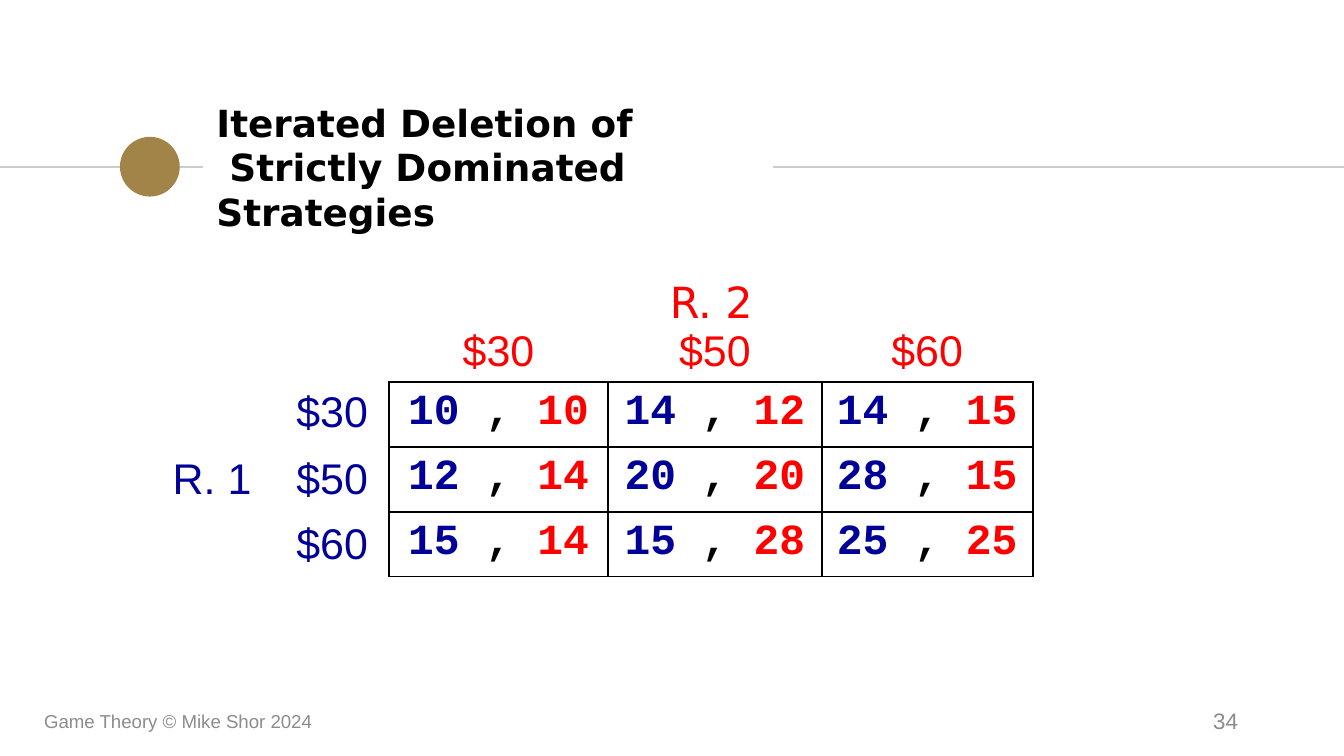
from dataclasses import dataclass

from lxml import etree
from pptx import Presentation
from pptx.dml.color import RGBColor
from pptx.enum import shapes, text
from pptx.oxml import ns
from pptx.util import Inches, Pt

SLIDE_WIDTH = Inches(10)
SLIDE_HEIGHT = SLIDE_WIDTH * 9 // 16
BLACK, GREY, RULE, GOLD = "000000", "8C8C8C", "CCCCCC", "A28448"
ROW_PLAYER, COLUMN_PLAYER = "000099", "FF0000"
LEFT, CENTER, RIGHT = text.PP_ALIGN.LEFT, text.PP_ALIGN.CENTER, text.PP_ALIGN.RIGHT
TOP, MIDDLE, BOTTOM = text.MSO_ANCHOR.TOP, text.MSO_ANCHOR.MIDDLE, text.MSO_ANCHOR.BOTTOM

PRICES = ["$30", "$50", "$60"]
PAYOFFS = [
    [(10, 10), (14, 12), (14, 15)],
    [(12, 14), (20, 20), (28, 15)],
    [(15, 14), (15, 28), (25, 25)],
]
COLUMN_SHARES = [9.2, 7.9, 16.3, 15.9, 15.7]
ROW_SHARE = 8.58


@dataclass
class Box:
    """A rectangle in percent of the slide's width and height."""
    left: float
    top: float
    width: float
    height: float

    def lengths(self) -> tuple:
        return across(self.left), down(self.top), across(self.width), down(self.height)


@dataclass
class Label:
    box: Box
    words: str
    size: float
    color: str
    font: str = "Arial"
    align: text.PP_ALIGN = LEFT
    anchor: text.MSO_ANCHOR = MIDDLE
    margin: float = 0.1
    wrap: bool = True


def across(percent: float) -> int:
    return round(SLIDE_WIDTH * percent / 100)


def down(percent: float) -> int:
    return round(SLIDE_HEIGHT * percent / 100)


def rgb(color: str) -> RGBColor:
    return RGBColor.from_string(color)


def write(paragraph, words: str, *, size: float = 23, color: str = BLACK,
          font: str = "Arial", bold: bool = False, align=LEFT) -> None:
    paragraph.alignment = align
    for index, line in enumerate(words.split("\v")):
        if index:
            paragraph.add_line_break()
        run = paragraph.add_run()
        run.text = line
        run.font.size, run.font.name, run.font.bold = Pt(size), font, bold
        run.font.color.rgb = rgb(color)


def set_margins(frame, horizontal: float, vertical: float) -> None:
    frame.margin_left = frame.margin_right = Inches(horizontal)
    frame.margin_top = frame.margin_bottom = Inches(vertical)


def add_label(slide, label: Label) -> None:
    frame = slide.shapes.add_textbox(*label.box.lengths()).text_frame
    frame.word_wrap = label.wrap
    frame.vertical_anchor = label.anchor
    set_margins(frame, label.margin, label.margin / 2)
    write(frame.paragraphs[0], label.words, size=label.size, color=label.color,
          font=label.font, align=label.align)


def add_rule(slide, start: float, end: float, height: float):
    rule = slide.shapes.add_connector(shapes.MSO_CONNECTOR.STRAIGHT, across(start),
                                      down(height), across(end), down(height))
    rule.line.color.rgb, rule.line.width = rgb(RULE), Pt(0.75)
    etree.SubElement(rule._element.spPr, ns.qn("a:effectLst"))
    return rule


def set_borders(cell, sides: str) -> None:
    """Draw the named sides (L, R, T, B) in black and clear the others."""
    properties = cell._tc.get_or_add_tcPr()
    for index, side in enumerate("LRTB"):
        line = etree.Element(ns.qn(f"a:ln{side}"), w=str(Pt(1)))
        if side in sides:
            fill = etree.SubElement(line, ns.qn("a:solidFill"))
            etree.SubElement(fill, ns.qn("a:srgbClr"), val=BLACK)
        else:
            etree.SubElement(line, ns.qn("a:noFill"))
        properties.insert(index, line)


def add_payoff_table(slide, left: float, top: float) -> None:
    rows, columns = len(PRICES) + 1, len(COLUMN_SHARES)
    box = Box(left, top, sum(COLUMN_SHARES), rows * ROW_SHARE)
    table = slide.shapes.add_table(rows, columns, *box.lengths()).table
    table.first_row = table.horz_banding = False
    for column, share in zip(table.columns, COLUMN_SHARES):
        column.width = across(share)

    # Fills, margins and borders
    for row in range(rows):
        table.rows[row].height = down(ROW_SHARE)
        for column in range(columns):
            cell = table.cell(row, column)
            cell.fill.background()
            set_margins(cell, 0.1, 0.05)
            if column >= 2:
                set_borders(cell, "LRTB" if row else "B")
            else:
                set_borders(cell, "R" if row and column == 1 else "")

    # Row player's name beside all the rows
    player = table.cell(1, 0)
    player.merge(table.cell(rows - 1, 0))
    player.vertical_anchor = MIDDLE
    write(player.text_frame.paragraphs[0], "R. 1", color=ROW_PLAYER)

    # Prices along both sides, payoffs inside
    for index, price in enumerate(PRICES):
        header, side = table.cell(0, index + 2), table.cell(index + 1, 1)
        header.vertical_anchor = BOTTOM
        side.vertical_anchor = MIDDLE if index else TOP
        write(header.text_frame.paragraphs[0], price, color=COLUMN_PLAYER, align=CENTER)
        write(side.text_frame.paragraphs[0], price, color=ROW_PLAYER)
        for column, (first, second) in enumerate(PAYOFFS[index], start=2):
            paragraph = table.cell(index + 1, column).text_frame.paragraphs[0]
            for words, color in ((str(first), ROW_PLAYER), (" , ", BLACK),
                                 (str(second), COLUMN_PLAYER)):
                write(paragraph, words, color=color, font="Courier New",
                      bold=True, align=CENTER)


def main() -> None:
    presentation = Presentation()
    presentation.slide_width, presentation.slide_height = SLIDE_WIDTH, SLIDE_HEIGHT
    slide = presentation.slides.add_slide(presentation.slide_layouts[5])

    # Title
    title = slide.shapes.title
    title.left, title.top, title.width, title.height = Box(15.1, 17.85, 42.45, 8.5).lengths()
    frame = title.text_frame
    frame.word_wrap, frame.auto_size = True, text.MSO_AUTO_SIZE.NONE
    frame.vertical_anchor = MIDDLE
    set_margins(frame, 0.1, 0.1)
    write(frame.paragraphs[0], "Iterated Deletion of\v Strictly Dominated Strategies",
          size=20, font="DejaVu Sans", bold=True)

    # Rules on both sides of the title, with the dot
    add_rule(slide, 0, 15.1, 22.1).end_connect(title, 1)
    add_rule(slide, 57.55, 100, 22.1).begin_connect(title, 3)
    dot = slide.shapes.add_shape(shapes.MSO_SHAPE.OVAL, *Box(8.93, 18.1, 4.45, 7.9).lengths())
    dot.shadow.inherit = False
    dot.fill.solid()
    dot.fill.fore_color.rgb = rgb(GOLD)
    dot.line.fill.background()

    # Game matrix
    add_payoff_table(slide, 11.85, 41.98)

    # Column player's name and footer
    for label in (
        Label(Box(49.85, 36.4, 6.6, 6.94), "R. 2", 23, COLUMN_PLAYER, font="DejaVu Sans",
              anchor=TOP, margin=0, wrap=False),
        Label(Box(2.3, 92.7, 33.8, 5.34), "Game Theory © Mike Shor 2024", 10, GREY),
        Label(Box(70.6, 92.7, 22.5, 5.34), "34", 12, GREY, align=RIGHT),
    ):
        add_label(slide, label)

    presentation.save("out.pptx")


if __name__ == "__main__":
    main()
